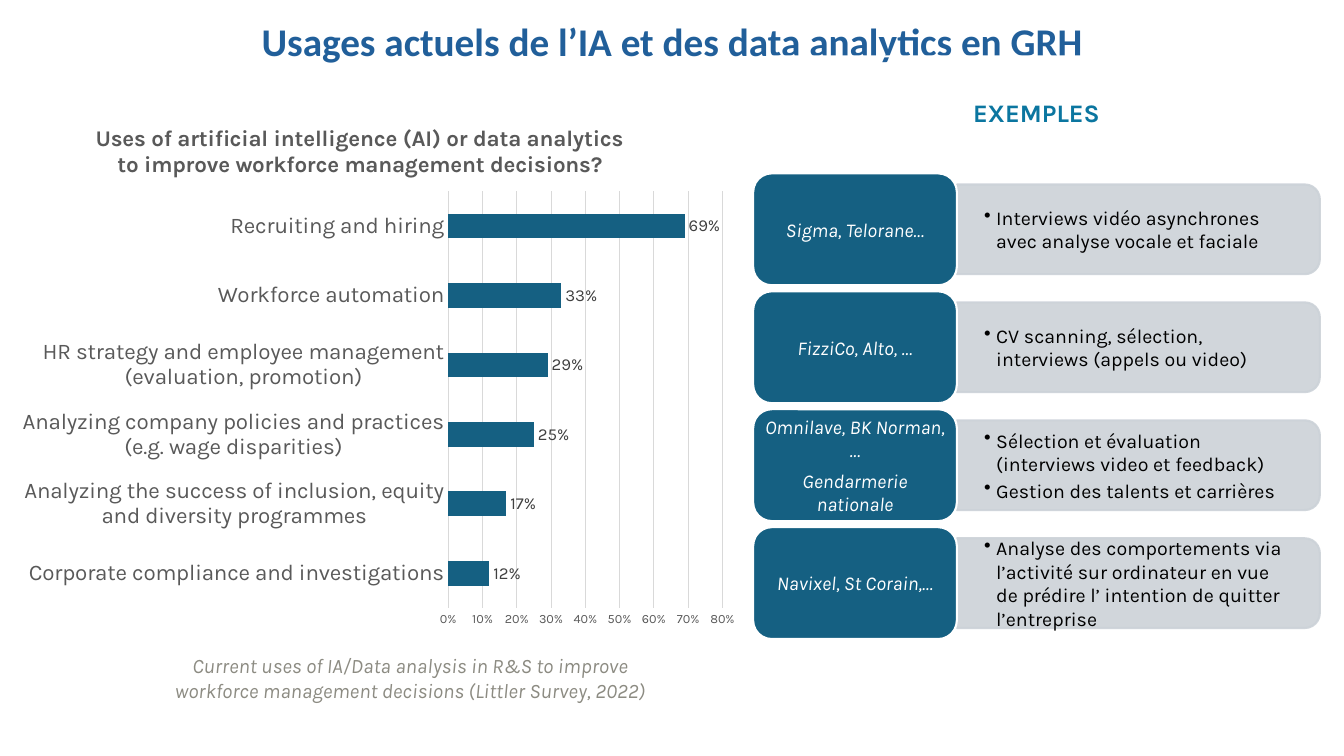
from dataclasses import dataclass

from lxml import etree
from pptx import Presentation
from pptx.chart.data import CategoryChartData
from pptx.dml.color import RGBColor
from pptx.enum.chart import XL_CHART_TYPE, XL_LABEL_POSITION, XL_TICK_MARK
from pptx.enum.shapes import MSO_SHAPE
from pptx.enum.text import MSO_ANCHOR, PP_ALIGN
from pptx.oxml import parse_xml
from pptx.oxml.ns import nsdecls, qn
from pptx.util import Inches, Pt

ROUND_RECT = MSO_SHAPE.ROUNDED_RECTANGLE
BAR_SHAPE = MSO_SHAPE.ROUND_2_SAME_RECTANGLE
CENTER, LEFT = PP_ALIGN.CENTER, PP_ALIGN.LEFT
TOP, MIDDLE = MSO_ANCHOR.TOP, MSO_ANCHOR.MIDDLE
NO_TICK = MSO_TICK = XL_TICK_MARK.NONE
TITLE_ONLY = 5

TEAL, WHITE, BAR_GREY, GRID_GREY = "156082", "FFFFFF", "CCD2D8", "D9D9D9"
CHART_TEXT = "595959"

CARD_LEFT, CARD_WIDTH, CARD_HEIGHT = 7.47, 2.02, 1.11
BAR_WIDTH, BAR_HEIGHT = 3.6, 0.89
FIRST_ROW_TOP, ROW_STEP = 1.72, 1.17


@dataclass
class Example:
    companies: list[str]
    uses: list[str]


@dataclass
class TextStyle:
    size: float
    color: str
    font: str = "Karla"
    bold: bool = False
    italic: bool = False


EXAMPLES = [
    Example(["Sigma, Telorane…"],
            ["Interviews vidéo asynchrones avec analyse vocale et faciale"]),
    Example(["FizziCo, Alto, …"],
            ["CV scanning, sélection, interviews (appels ou video)"]),
    Example(["Omnilave, BK Norman, …", "Gendarmerie nationale"],
            ["Sélection et évaluation (interviews video et feedback)",
             "Gestion des talents et carrières"]),
    Example(["Navixel, St Corain,…"],
            ["Analyse des comportements via l’activité sur ordinateur en vue "
             "de prédire l’ intention de quitter l’entreprise"]),
]

USAGE_RATES = {
    "Corporate compliance and investigations": 0.12,
    "Analyzing the success of inclusion, equity and diversity programmes": 0.17,
    "Analyzing company policies and practices (e.g. wage disparities)": 0.25,
    "HR strategy and employee management (evaluation, promotion)": 0.29,
    "Workforce automation": 0.33,
    "Recruiting and hiring": 0.69,
}


def rgb(color: str) -> RGBColor:
    return RGBColor.from_string(color)


def style_font(font, style: TextStyle) -> None:
    font.name, font.size = style.font, Pt(style.size)
    font.bold, font.italic = style.bold, style.italic
    font.color.rgb = rgb(style.color)


def write(shape, lines: list[str], style: TextStyle, align=CENTER, anchor=MIDDLE,
          margins=(0.1, 0.05), space_after=0.0, bullets=False) -> None:
    frame = shape.text_frame
    frame.word_wrap = True
    frame.vertical_anchor = anchor
    frame.margin_left = frame.margin_right = Inches(margins[0])
    frame.margin_top = frame.margin_bottom = Inches(margins[1])
    frame.text = "\n".join(lines)
    for paragraph in frame.paragraphs:
        paragraph.alignment = align
        paragraph.space_after = Pt(space_after)
        if bullets:
            properties = paragraph._p.get_or_add_pPr()
            properties.set("marL", str(Inches(0.12)))
            properties.set("indent", str(-Inches(0.12)))
            etree.SubElement(properties, qn("a:buChar")).set("char", "•")
        for run in paragraph.runs:
            style_font(run.font, style)


def add_box(slide, kind, left: float, top: float, width: float, height: float,
            fill: str | None, line: str):
    shape = slide.shapes.add_shape(
        kind, Inches(left), Inches(top), Inches(width), Inches(height))
    shape.shadow.inherit = False
    if fill:
        shape.fill.solid()
        shape.fill.fore_color.rgb = rgb(fill)
    else:
        shape.fill.background()
    shape.line.color.rgb = rgb(line)
    shape.line.width = Pt(1.5)
    return shape


def add_text_box(slide, left: float, top: float, width: float, height: float):
    return slide.shapes.add_textbox(
        Inches(left), Inches(top), Inches(width), Inches(height))


def add_example(slide, example: Example, top: float) -> None:
    bar_left = CARD_LEFT + CARD_WIDTH
    middle = top + CARD_HEIGHT / 2
    # The bar is drawn upright and turned, so its rounded end faces right.
    bar = add_box(slide, BAR_SHAPE, bar_left + (BAR_WIDTH - BAR_HEIGHT) / 2,
                  middle - BAR_WIDTH / 2, BAR_HEIGHT, BAR_WIDTH, BAR_GREY, BAR_GREY)
    bar.rotation = 90
    for color in bar._element.spPr.iter(qn("a:srgbClr")):
        etree.SubElement(color, qn("a:alpha")).set("val", "90000")

    uses = add_text_box(slide, bar_left, middle - 0.4, 3.55, 0.8)
    write(uses, example.uses, TextStyle(14, "000000"), LEFT,
          margins=(0.27, 0.14), space_after=2.1, bullets=True)

    card = add_box(slide, ROUND_RECT, CARD_LEFT, top, CARD_WIDTH, CARD_HEIGHT,
                   TEAL, WHITE)
    write(card, example.companies, TextStyle(14, WHITE, italic=True),
          margins=(0.06, 0.08), space_after=4.9)


def place(parent, x: float, y: float, size: tuple[float, float] | None = None):
    """Set a manual chart layout, in fractions of the chart area."""
    values = {"xMode": "edge", "yMode": "edge", "x": x, "y": y}
    if size:
        values = {"layoutTarget": "inner", **values, "w": size[0], "h": size[1]}
    items = "".join(f'<c:{key} val="{value}"/>' for key, value in values.items())
    layout = parse_xml(f'<c:layout {nsdecls("c")}><c:manualLayout>{items}'
                       "</c:manualLayout></c:layout>")
    for old in parent.findall(qn("c:layout")):
        parent.remove(old)
    text = parent.find(qn("c:tx"))
    parent.insert(0 if text is None else 1, layout)


def add_usage_chart(slide) -> None:
    data = CategoryChartData(number_format="0%")
    data.categories = list(USAGE_RATES)
    data.add_series("Series 1", list(USAGE_RATES.values()))
    chart = slide.shapes.add_chart(
        XL_CHART_TYPE.BAR_CLUSTERED, Inches(0.11), Inches(1.05),
        Inches(7.35), Inches(5.3), data).chart
    style_font(chart.font, TextStyle(10, "000000"))
    chart.has_legend = False

    title = chart.chart_title
    title.text_frame.text = ("Uses of artificial intelligence (AI) or data analytics\n"
                             "to improve workforce management decisions?")
    for paragraph in title.text_frame.paragraphs:
        style_font(paragraph.runs[0].font, TextStyle(16, CHART_TEXT, bold=True))
    place(title._element, 0.11, 0.03)
    place(chart._chartSpace.chart.plotArea, 0.59, 0.16, (0.37, 0.78))

    for axis, size in ((chart.category_axis, 16), (chart.value_axis, 9)):
        axis.major_tick_mark = axis.minor_tick_mark = NO_TICK
        style_font(axis.tick_labels.font, TextStyle(size, CHART_TEXT))
    chart.category_axis.format.line.color.rgb = rgb(GRID_GREY)
    chart.category_axis.format.line.width = Pt(0.75)

    values = chart.value_axis
    values.minimum_scale, values.maximum_scale, values.major_unit = 0, 0.8, 0.1
    values.tick_labels.number_format = "0%"
    values.tick_labels.number_format_is_linked = False
    values.format.line.fill.background()
    values.major_gridlines.format.line.color.rgb = rgb(GRID_GREY)
    values.major_gridlines.format.line.width = Pt(0.75)

    plot = chart.plots[0]
    plot.gap_width = 182
    plot.vary_by_categories = False
    fill = plot.series[0].format.fill
    fill.solid()
    fill.fore_color.rgb = rgb(TEAL)
    plot.has_data_labels = True
    labels = plot.data_labels
    labels.show_value = True
    labels.number_format = "0%"
    labels.number_format_is_linked = False
    labels.position = XL_LABEL_POSITION.OUTSIDE_END
    style_font(labels.font, TextStyle(12, "404040"))


def main() -> None:
    presentation = Presentation()
    presentation.slide_width, presentation.slide_height = Inches(13.33), Inches(7.5)
    slide = presentation.slides.add_slide(presentation.slide_layouts[TITLE_ONLY])

    title = slide.shapes.title
    title.left, title.top = Inches(0), Inches(0.12)
    title.width, title.height = Inches(13.33), Inches(0.57)
    write(title, ["Usages actuels de l’IA et des data analytics en GRH"],
          TextStyle(28, "215F9A", "Calibri", bold=True), anchor=TOP)

    caption = add_text_box(slide, 1.47, 6.43, 5.2, 0.59)
    write(caption, ["Current uses of IA/Data analysis in R&S to improve workforce "
                    "management decisions (Littler Survey, 2022)"],
          TextStyle(14.7, "8C8B82", italic=True), anchor=TOP)

    add_usage_chart(slide)

    heading = add_box(slide, ROUND_RECT, CARD_LEFT, 0.56, 5.62, CARD_HEIGHT, None, WHITE)
    write(heading, ["EXEMPLES"], TextStyle(18, "0B76A0", bold=True), space_after=6.3)

    for row, example in enumerate(EXAMPLES):
        add_example(slide, example, FIRST_ROW_TOP + row * ROW_STEP)

    presentation.save("out.pptx")


if __name__ == "__main__":
    main()
